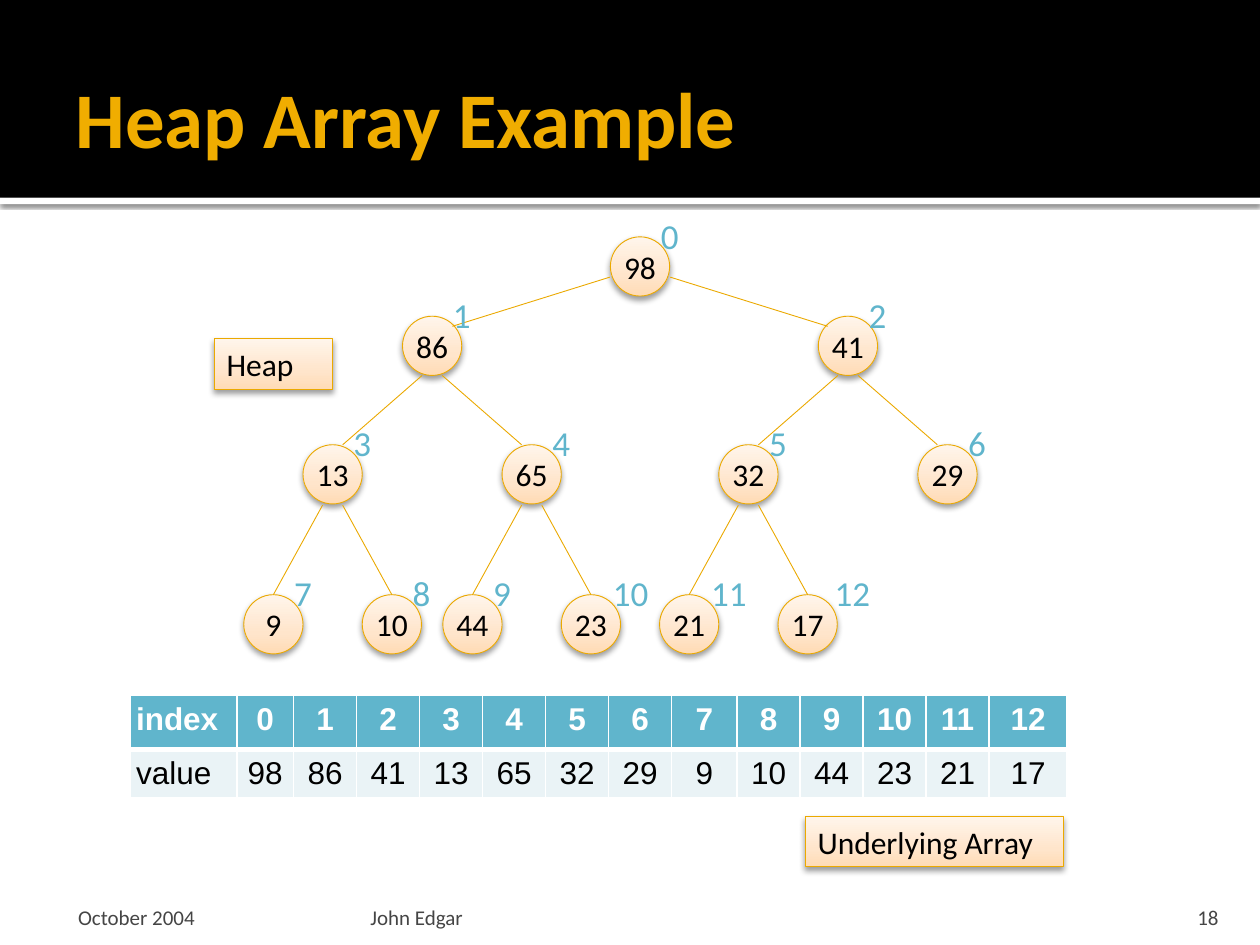
from copy import deepcopy

from lxml import etree
from pptx import Presentation
from pptx.dml.color import RGBColor
from pptx.enum.shapes import MSO_CONNECTOR, MSO_SHAPE
from pptx.enum.text import MSO_ANCHOR, PP_ALIGN
from pptx.oxml.ns import qn
from pptx.util import Inches, Pt

COLORS = {
    "black": "000000", "white": "FFFFFF", "title": "F0AD00", "footer": "454545",
    "index": "60B5CC", "value_row": "EAF3F6", "edge": "EBA900",
}
GRADIENT = [(0, "FFDBB5"), (0.35, "FFE5CB"), (1, "FFF5EB")]
HEAP = [98, 86, 41, 13, 65, 32, 29, 9, 10, 44, 23, 21, 17]

NODE = 0.47
LEVEL_TOPS = [0, 0.63, 1.65, 2.84]
SPREADS = [1.65, 0.79, 0.47]  # horizontal distance from parent to child, by level
# Edge ends by level: offset from the parent's top centre, then from the child's
EDGE_ENDS = [((0.24, 0.32), (0.16, 0.08)),
             ((0.08, 0.47), (0.08, 0)),
             ((0.08, 0.48), (0, 0))]
INDEX_WIDTHS = {10: 0.63, 11: 0.63, 12: 0.71}


def rgb(name):
    return RGBColor.from_string(COLORS[name])


def box_inches(*lengths):
    return [Inches(n) for n in lengths]


def write(tf, text, size, color, font="Calibri", bold=False, align=PP_ALIGN.LEFT,
          anchor=MSO_ANCHOR.TOP, insets=(0.1, 0.05, 0.1, 0.05), wrap=True):
    tf.word_wrap = wrap
    tf.vertical_anchor = anchor
    (tf.margin_left, tf.margin_top,
     tf.margin_right, tf.margin_bottom) = box_inches(*insets)
    p = tf.paragraphs[0]
    p.alignment = align
    add_run(p, text, size, color, font, bold)


def add_run(p, text, size, color, font, bold):
    r = p.add_run()
    r.text = text
    r.font.size, r.font.name, r.font.bold = Pt(size), font, bold
    r.font.color.rgb = rgb(color)


def add_text(s, box, text, size, color, **style):
    sp = s.shapes.add_textbox(*box_inches(*box))
    write(sp.text_frame, text, size, color, **style)


def add_shadow(sp, alpha, blur, distance):
    sp.shadow.inherit = False
    effects = sp.element.spPr.find(qn("a:effectLst"))
    shadow = etree.SubElement(effects, qn("a:outerShdw"), blurRad=str(Pt(blur)),
                              dist=str(Pt(distance)), dir="5400000", rotWithShape="0")
    color = etree.SubElement(shadow, qn("a:srgbClr"), val=COLORS["black"])
    etree.SubElement(color, qn("a:alpha"), val=str(alpha * 1000))


def add_peach_shape(s, kind, box):
    """Add a preset shape with the peach gradient, gold outline and soft shadow."""
    sp = s.shapes.add_shape(kind, *box_inches(*box))
    sp.fill.gradient()
    stops = sp.element.spPr.find(".//" + qn("a:gsLst"))
    stops.append(deepcopy(stops[0]))
    for stop, (position, color) in zip(sp.fill.gradient_stops, GRADIENT):
        stop.position = position
        stop.color.rgb = RGBColor.from_string(color)
    sp.fill.gradient_angle = 90
    sp.line.color.rgb = rgb("edge")
    sp.line.width = Pt(0.5)
    add_shadow(sp, 38, 3.5, 2)
    return sp


def add_header(s, box, text):
    left, top, width, height = box
    for name, y, h in (("white", top + height, 0.05), ("black", top, height)):
        sp = s.shapes.add_shape(MSO_SHAPE.RECTANGLE, *box_inches(left, y, width, h))
        sp.fill.solid()
        sp.fill.fore_color.rgb = rgb(name)
        sp.line.fill.background()
        if name == "white":
            add_shadow(sp, 60, 2.5, 0.8)
        else:
            sp.shadow.inherit = False
    title = s.shapes.title
    title.left, title.top, title.width, title.height = box_inches(
        left + 0.5, top + 0.3, width - 1, 1.25)
    write(title.text_frame, text, 45, "title", bold=True, anchor=MSO_ANCHOR.MIDDLE,
          insets=(0.1, 0.05, 0.05, 0.05))
    s.shapes.element.append(title.element)  # bring the title in front of the bands


def add_edge(s, start, end):
    line = s.shapes.add_connector(MSO_CONNECTOR.STRAIGHT, *box_inches(*start, *end))
    line.line.color.rgb = rgb("edge")
    line.line.width = Pt(0.5)
    etree.SubElement(line.element.spPr, qn("a:effectLst"))


def add_heap(s, root_x, top, values):
    """Draw the heap as a tree whose root has its top centre at (root_x, top)."""
    places = [(root_x, top)]
    for i in range(1, len(values)):
        level = (i + 1).bit_length() - 1
        side = -1 if i % 2 else 1
        parent_x = places[(i - 1) // 2][0]
        places.append((parent_x + side * SPREADS[level - 1], top + LEVEL_TOPS[level]))

    for value, (x, y) in zip(values, places):
        sp = add_peach_shape(s, MSO_SHAPE.OVAL, (x - NODE / 2, y, NODE, NODE))
        write(sp.text_frame, str(value), 18, "black", align=PP_ALIGN.CENTER,
              anchor=MSO_ANCHOR.MIDDLE, insets=(0, 0, 0, 0), wrap=False)

    for i, (x, y) in enumerate(places[1:], 1):
        side = -1 if i % 2 else 1
        parent_x, parent_y = places[(i - 1) // 2]
        (px, py), (cx, cy) = EDGE_ENDS[(i + 1).bit_length() - 2]
        add_edge(s, (parent_x + side * px, parent_y + py), (x - side * cx, y + cy))

    for i, (x, y) in enumerate(places):
        add_text(s, (x, y - 0.23, INDEX_WIDTHS.get(i, NODE), 0.43), str(i), 20, "index",
                 align=PP_ALIGN.CENTER)


def add_borders(cell, widths):
    """Give a cell white left, right, top and bottom borders, in points."""
    tc_pr = cell._tc.get_or_add_tcPr()
    for tag, width in zip(("a:lnL", "a:lnR", "a:lnT", "a:lnB"), widths):
        line = etree.SubElement(tc_pr, qn(tag), w=str(Pt(width)))
        fill = etree.SubElement(line, qn("a:solidFill"))
        etree.SubElement(fill, qn("a:srgbClr"), val=COLORS["white"])


def add_array_table(s, box, values):
    rows = [["index", *range(len(values))], ["value", *values]]
    table = s.shapes.add_table(2, len(rows[0]), *box_inches(*box)).table
    table.horz_banding = False
    widths = [0.85, 0.45] + [0.5] * 6 + [0.52] + [0.5] * 4 + [0.62]
    for column, width in zip(table.columns, widths):
        column.width = Inches(width)
    for row, height in zip(table.rows, (0.43, 0.31)):
        row.height = Inches(height)
    styles = [("index", "white", True, (1, 1, 1, 3)),
              ("value_row", "black", False, (1, 1, 3, 1))]
    for r, (fill, color, bold, borders) in enumerate(styles):
        for c, content in enumerate(rows[r]):
            cell = table.cell(r, c)
            add_borders(cell, borders)
            cell.fill.solid()
            cell.fill.fore_color.rgb = rgb(fill)
            (cell.margin_left, cell.margin_top,
             cell.margin_right, cell.margin_bottom) = box_inches(*[0.05] * 4)
            p = cell.text_frame.paragraphs[0]
            p.alignment = PP_ALIGN.CENTER if c else PP_ALIGN.LEFT
            add_run(p, str(content), 18, color, "Arial", bold)


def add_label(s, box, text):
    sp = add_peach_shape(s, MSO_SHAPE.RECTANGLE, box)
    write(sp.text_frame, text, 18, "black")


def add_footer(s, top):
    parts = [("October 2004", 0.5, 2.33, 0.12, 0.05, PP_ALIGN.LEFT),
             ("John Edgar", 2.89, 6.02, 0.05, 0.05, PP_ALIGN.LEFT),
             ("18", 8.97, 0.8, 0.1, 0.1, PP_ALIGN.RIGHT)]
    for text, left, width, inset_left, inset_right, align in parts:
        add_text(s, (left, top, width, 0.3), text, 12, "footer", align=align,
                 anchor=MSO_ANCHOR.BOTTOM, insets=(inset_left, 0.05, inset_right, 0))


def main():
    prs = Presentation()
    prs.slide_width, prs.slide_height = Inches(10), Inches(7.5)
    s = prs.slides.add_slide(prs.slide_layouts[5])
    add_header(s, (0, 0, 10, 1.57), "Heap Array Example")
    add_array_table(s, (1.03, 5.52, 7.44, 0.83), HEAP)
    add_footer(s, 7.08)
    add_heap(s, 5.08, 1.88, HEAP)
    add_label(s, (1.7, 2.69, 0.94, 0.4), "Heap")
    add_label(s, (6.39, 6.48, 2.05, 0.4), "Underlying Array")
    prs.save("out.pptx")


if __name__ == "__main__":
    main()
